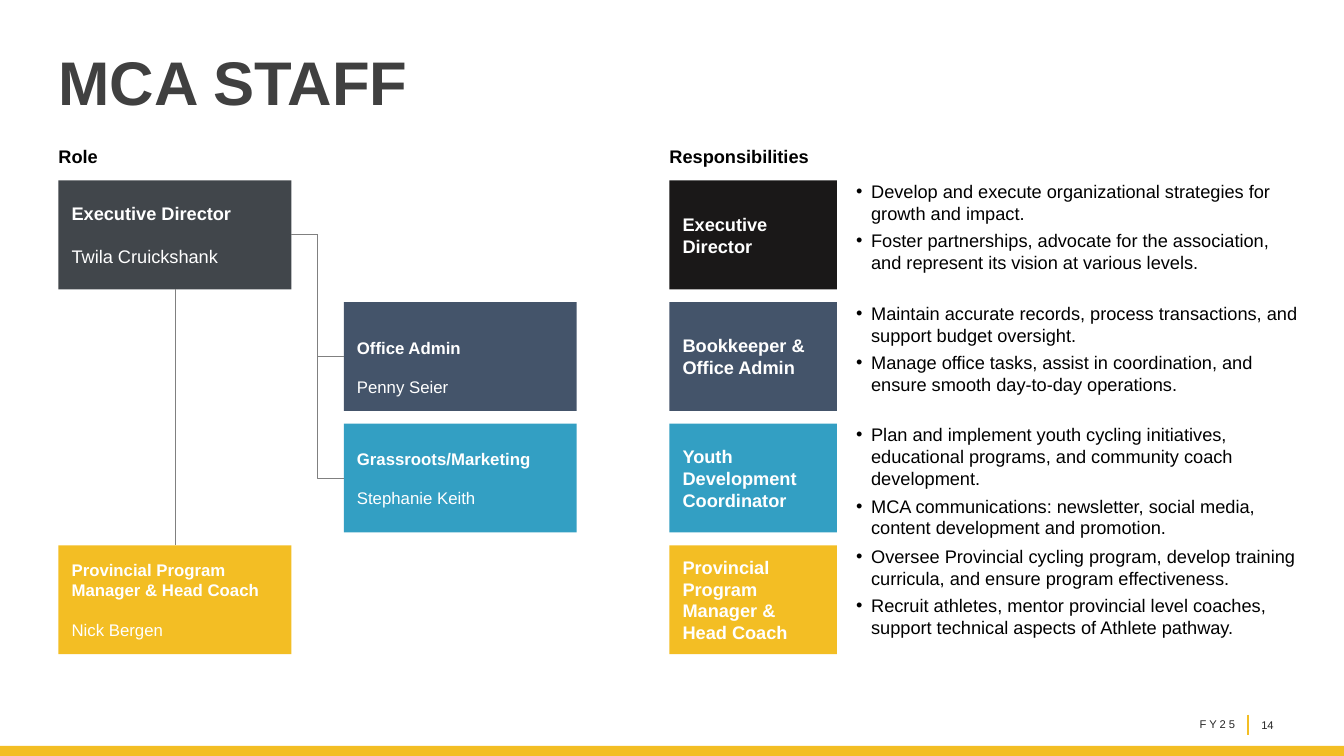
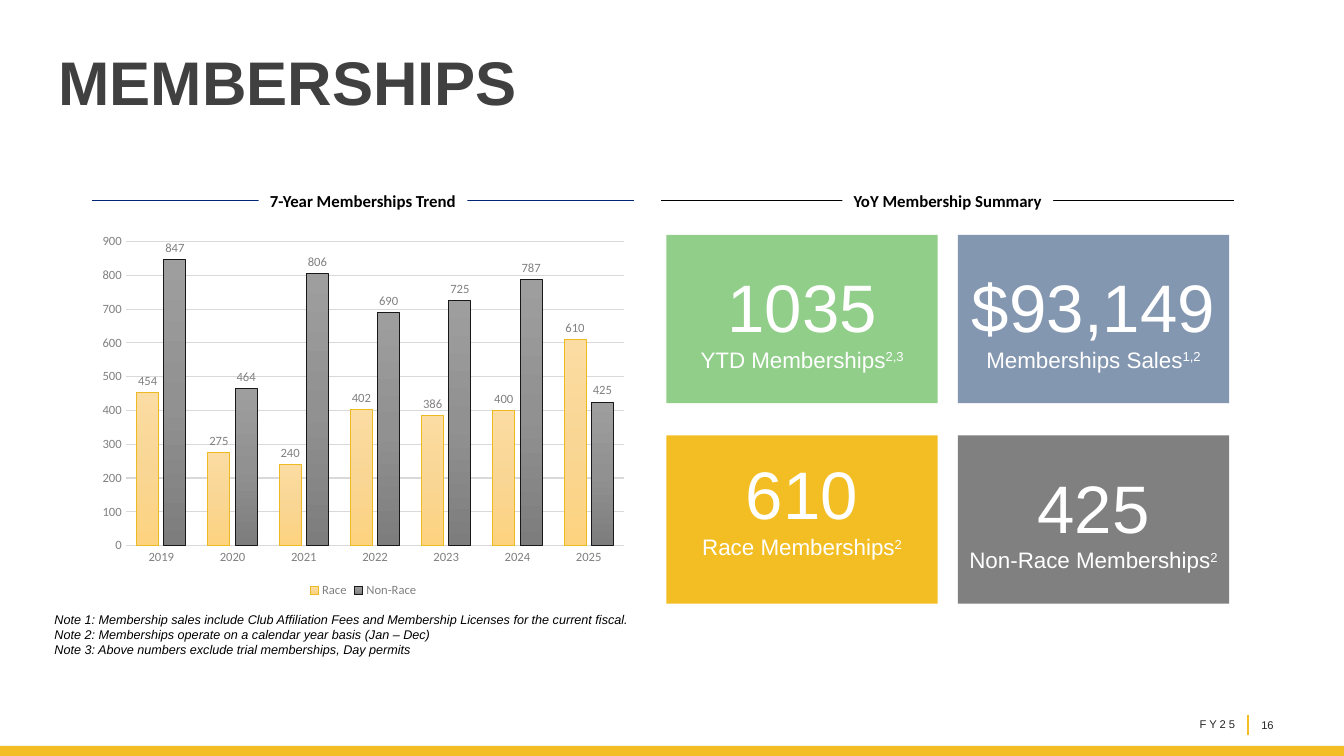
from lxml.etree import SubElement
from pptx import Presentation
from pptx.chart.data import CategoryChartData
from pptx.dml.color import RGBColor
from pptx.enum.chart import XL_CHART_TYPE as Chart, XL_LABEL_POSITION as LabelPlace
from pptx.enum.chart import XL_LEGEND_POSITION as LegendPlace, XL_TICK_MARK as Tick
from pptx.enum.shapes import MSO_CONNECTOR as Link, MSO_SHAPE as Shape
from pptx.enum.text import MSO_ANCHOR as Anchor, PP_ALIGN as Align
from pptx.oxml.ns import qn
from pptx.util import Inches, Pt

WHITE, BLACK = "FFFFFF", "000000"
GOLD, NAVY, TEAL = "F3BE24", "44546A", "339FC3"
GRAY, INK, TITLE, GRID = "808080", "262626", "404040", "D9D9D9"
LEFT = 0.58


def rgb(value):
    return RGBColor.from_string(value)


def inches(*lengths):
    return [Inches(length) for length in lengths]


def style_font(font, size, color, name="Arial", bold=False, italic=False):
    font.size, font.name, font.bold, font.italic = Pt(size), name, bold, italic
    font.color.rgb = rgb(color)


def write(para, text, tracking=0, raised=False, **style):
    span = para.add_run()
    span.text = text
    style_font(span.font, **style)
    properties = span.font._element
    if tracking:
        properties.set("spc", str(tracking * 100))
    if raised:
        properties.set("baseline", "30000")


class Board:
    def __init__(self, deck):
        self.deck = deck
        self.page = None

    def start(self, title, number):
        self.page = self.deck.slides.add_slide(self.deck.slide_layouts[6])
        self.text([title], (LEFT, 0.36, 12.16, 0.86), size=44, color=TITLE, bold=True,
                  anchor=Anchor.BOTTOM, margins=(0, 0, 0, 0.05), leading=1.2)
        self.box((0, 7.4, 13.33, 0.1), GOLD)
        self.line((12.38, 7.09), (12.38, 7.29), GOLD, 1.5)
        self.text(["FY25"], (11.87, 7.12, 0.38, 0.13), size=8, color=INK, tracking=2,
                  align=Align.RIGHT, wrap=False)
        self.text([number], (12.51, 6.99, 0.4, 0.4), size=8, color=INK,
                  anchor=Anchor.MIDDLE, wrap=False)

    def fill_frame(self, shape, paragraphs, margins=(0, 0, 0, 0), anchor=Anchor.TOP,
                   align=Align.LEFT, wrap=True, leading=None, gap=0, bullet=False, **style):
        frame = shape.text_frame
        frame.word_wrap, frame.vertical_anchor = wrap, anchor
        (frame.margin_left, frame.margin_top,
         frame.margin_right, frame.margin_bottom) = inches(*margins)
        for index, content in enumerate(paragraphs):
            para = frame.add_paragraph() if index else frame.paragraphs[0]
            if bullet:
                properties = para._p.get_or_add_pPr()
                properties.set("marL", str(Inches(0.15)))
                properties.set("indent", str(Inches(-0.15)))
                SubElement(properties, qn("a:buFont"), typeface="Arial")
                SubElement(properties, qn("a:buChar"), char="•")
            para.alignment = align
            if leading:
                para.line_spacing = leading
            if index:
                para.space_before = Pt(gap)
            spans = [(content, {})] if isinstance(content, str) else content
            for text, changes in spans:
                write(para, text, **{**style, **changes})

    def text(self, paragraphs, at, **style):
        box = self.page.shapes.add_textbox(*inches(*at))
        self.fill_frame(box, paragraphs, **style)

    def box(self, at, fill, paragraphs=(), **style):
        box = self.page.shapes.add_shape(Shape.RECTANGLE, *inches(*at))
        box.shadow.inherit = False
        box.fill.solid()
        box.fill.fore_color.rgb = rgb(fill)
        box.line.fill.background()
        self.fill_frame(box, paragraphs, **{"anchor": Anchor.MIDDLE, "color": WHITE, **style})
        return box

    def line(self, start, end, color, width, kind=Link.STRAIGHT):
        line = self.page.shapes.add_connector(kind, *inches(*start, *end))
        line.line.color.rgb = rgb(color)
        line.line.width = Pt(width)
        SubElement(line._element.spPr, qn("a:effectLst"))
        return line

    def join(self, first, first_side, second, second_side, kind):
        line = self.line((0, 0), (1, 1), GRAY, 0.5, kind)
        line.begin_connect(first, first_side)
        line.end_connect(second, second_side)

    def ruled_heading(self, text, left, right, label_width, color):
        self.line((left, 1.99), (right, 1.99), color, 1)
        label_left = (left + right - label_width) / 2
        self.box((label_left, 1.89, label_width, 0.2), WHITE, [text], size=12, color=BLACK,
                 name="Calibri", bold=True, align=Align.CENTER, wrap=False,
                 margins=(0.1, 0, 0.1, 0))

    def column_chart(self, at, categories, series_rows):
        data = CategoryChartData()
        data.categories = categories
        for name, values, *_ in series_rows:
            data.add_series(name, values)
        chart = self.page.shapes.add_chart(Chart.COLUMN_CLUSTERED, *inches(*at), data).chart
        small = dict(size=9, color=GRAY, name="Calibri")
        style_font(chart.font, 10, BLACK, "Calibri")
        chart.has_title = False
        chart.has_legend = True
        chart.legend.position = LegendPlace.BOTTOM
        chart.legend.include_in_layout = False
        style_font(chart.legend.font, **small)
        for axis in (chart.category_axis, chart.value_axis):
            axis.major_tick_mark = axis.minor_tick_mark = Tick.NONE
            style_font(axis.tick_labels.font, **small)
        scale = chart.value_axis
        scale.minimum_scale, scale.maximum_scale, scale.major_unit = 0, 900, 100
        scale.format.line.fill.background()
        for line in (chart.category_axis.format.line, scale.major_gridlines.format.line):
            line.color.rgb, line.width = rgb(GRID), Pt(0.75)
        plot = chart.plots[0]
        plot.vary_by_categories = False
        plot.gap_width, plot.overlap = 100, -24
        for series, (_, _, shades, outline) in zip(plot.series, series_rows):
            self.shade(series, shades)
            series.format.line.color.rgb = rgb(outline)
            series.format.line.width = Pt(0.75)
            labels = series.data_labels
            labels.show_value, labels.position = True, LabelPlace.OUTSIDE_END
            style_font(labels.font, **small)

    def shade(self, series, shades):
        fill = series.format.fill
        fill.gradient()
        fill.gradient_angle = 270
        stops = next(series._element.iter(qn("a:gsLst")))
        for stop in list(stops):
            stops.remove(stop)
        for index, color in enumerate(shades):
            place = 100000 * index // (len(shades) - 1)
            stop = SubElement(stops, qn("a:gs"), pos=str(place))
            SubElement(stop, qn("a:srgbClr"), val=color)


def staff_slide(board):
    board.start("MCA STAFF", "14")
    height, pad = 1.08, 0.13
    tops = [1.79 + row * (5.41 - 1.79) / 3 for row in range(4)]
    for heading, left in (("Role", LEFT), ("Responsibilities", 6.64)):
        board.text([heading], (left, 1.44, 6, 0.22), size=13, color=BLACK, bold=True)

    duties = [
        ("1A1818", ["Executive Director"],
         ["Develop and execute organizational strategies for growth and impact.",
          "Foster partnerships, advocate for the association, and represent its vision "
          "at various levels."]),
        (NAVY, ["Bookkeeper & Office Admin"],
         ["Maintain accurate records, process transactions, and support budget oversight.",
          "Manage office tasks, assist in coordination, and ensure smooth day-to-day "
          "operations."]),
        (TEAL, ["Youth Development Coordinator"],
         ["Plan and implement youth cycling initiatives, educational programs, and "
          "community coach development.",
          "MCA communications: newsletter, social media, content development and "
          "promotion."]),
        (GOLD, ["Provincial Program Manager &", "Head Coach"],
         ["Oversee Provincial cycling program, develop training curricula, and ensure "
          "program effectiveness.",
          "Recruit athletes, mentor provincial level coaches, support technical aspects "
          "of Athlete pathway."]),
    ]
    for top, (fill, role, tasks) in zip(tops, duties):
        board.box((6.64, top, 1.66, height), fill, role, size=13, bold=True,
                  margins=(pad,) * 4)
        board.text(tasks, (8.49, top, 4.39, height), size=13, color=BLACK, gap=4, bullet=True)

    people = [
        (LEFT, "41464B", "Executive Director", "Twila Cruickshank", 13, pad),
        (3.41, NAVY, "Office Admin", "Penny Seier", 12, 0.34),
        (3.41, TEAL, "Grassroots/Marketing", "Stephanie Keith", 12, pad),
        (LEFT, GOLD, "Provincial Program Manager & Head Coach", "Nick Bergen", 12, pad),
    ]
    director, office, marketing, coach = [
        board.box((left, top, 2.31, height), fill, [role, [(person, {"bold": False})]],
                  size=size, bold=True, gap=size * 1.15, margins=(pad, top_pad, pad, pad))
        for top, (left, fill, role, person, size, top_pad) in zip(tops, people)]
    board.join(director, 2, coach, 0, Link.STRAIGHT)
    for report in (office, marketing):
        board.join(director, 3, report, 1, Link.ELBOW)


def membership_slide(board):
    board.start("MEMBERSHIPS", "16")
    board.ruled_heading("7-Year Memberships Trend", 0.91, 6.29, 2.07, "002776")
    board.ruled_heading("YoY Membership Summary", 6.56, 12.24, 2.09, BLACK)
    board.column_chart((0.91, 2.25, 5.39, 3.72), [str(year) for year in range(2019, 2026)], [
        ("Race", (454, 275, 240, 402, 386, 400, 610),
         ("FBDCA2", "F9D694", "FDD37F"), "EEBA23"),
        ("Non-Race", (847, 464, 806, 690, 725, 787, 425),
         ("9E9E9E", "919191", "7D7D7D"), "191717"),
    ])
    tiles = [
        ("90CE89", "1035", "YTD Memberships", "2,3", 0.05),
        ("8497B0", "$93,149", "Memberships Sales", "1,2", 0.05),
        (GOLD, "610", "Race Memberships", "2", 0.31),
        (GRAY, "425", "Non-Race Memberships", "2", 0.05),
    ]
    for index, (fill, figure, label, notes, bottom) in enumerate(tiles):
        row, column = divmod(index, 2)
        caption = [(label, {"size": 16}), (notes, {"size": 16, "raised": True})]
        board.box((6.61 + column * 2.89, 2.33 + row * 1.99, 2.69, 1.67), fill,
                  [figure, caption], size=48, align=Align.CENTER,
                  margins=(0.1, 0.05, 0.1, bottom))
    board.text([
        "Note 1: Membership sales include Club Affiliation Fees and Membership Licenses "
        "for the current fiscal.",
        "Note 2: Memberships operate on a calendar year basis (Jan – Dec)",
        "Note 3: Above numbers exclude trial memberships, Day permits",
    ], (0.54, 6.07, 12.3, 0.61), size=9, color=BLACK, italic=True)


def main():
    deck = Presentation()
    deck.slide_width, deck.slide_height = inches(13.33, 7.5)
    board = Board(deck)
    staff_slide(board)
    membership_slide(board)
    deck.save("out.pptx")


if __name__ == "__main__":
    main()
